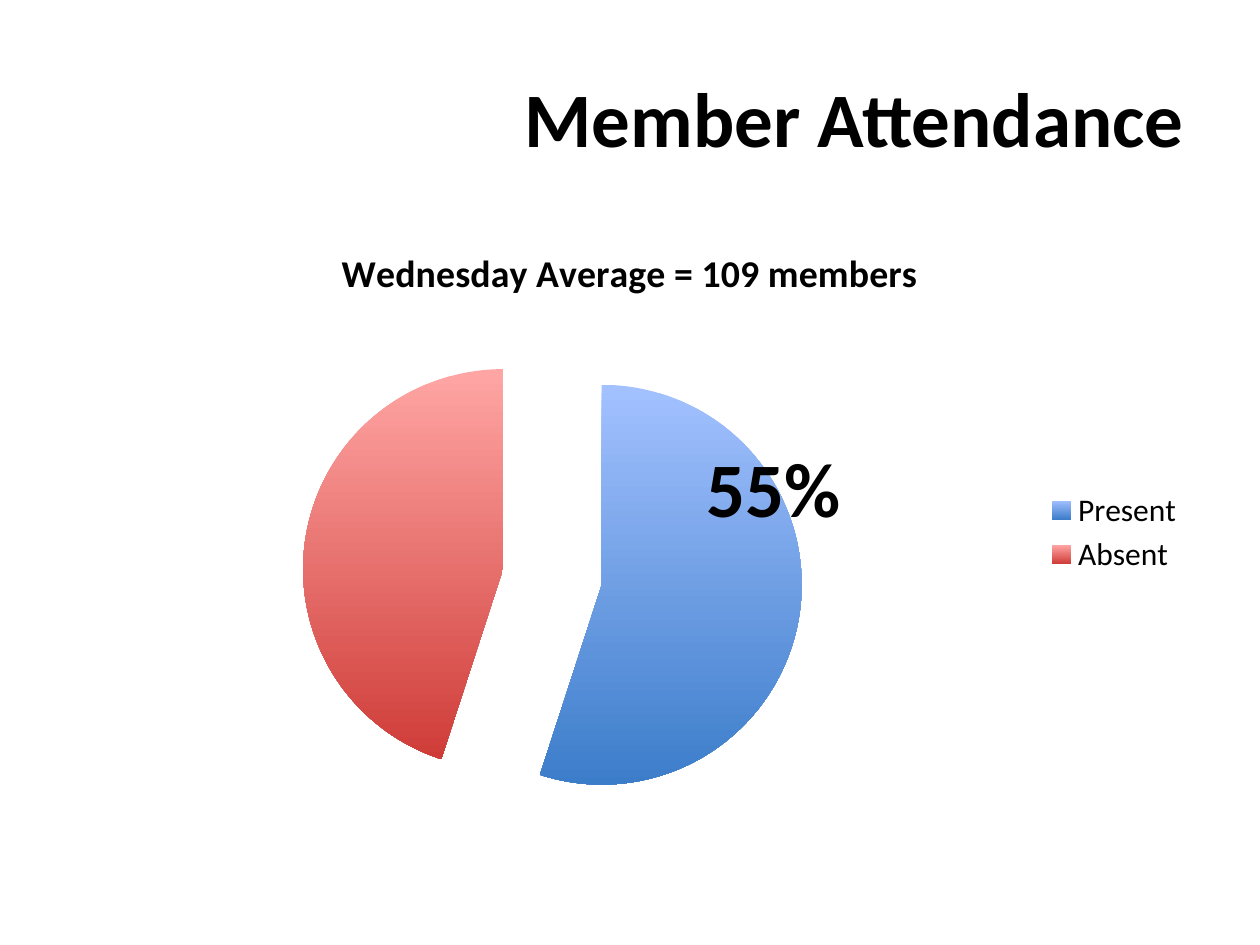
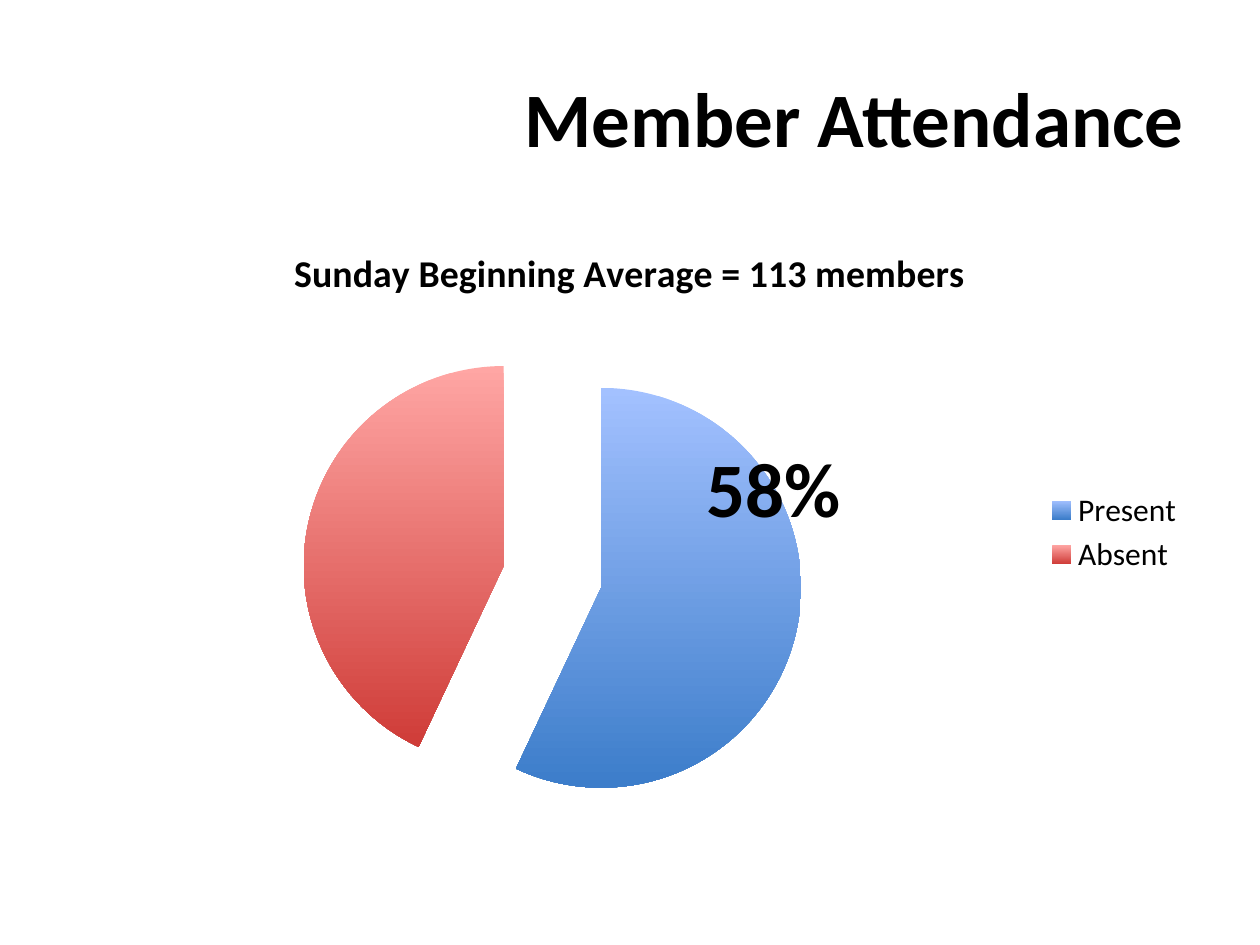
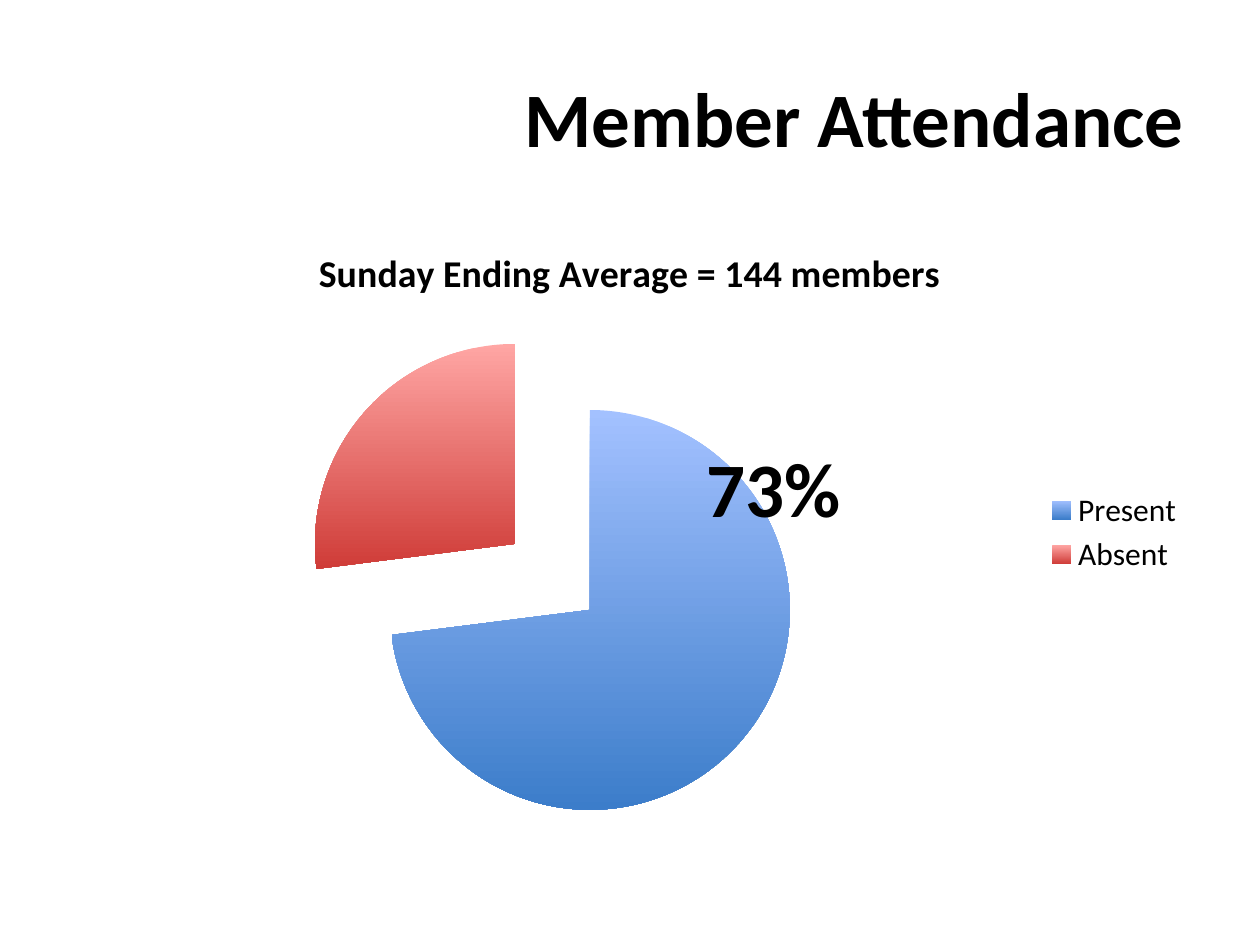
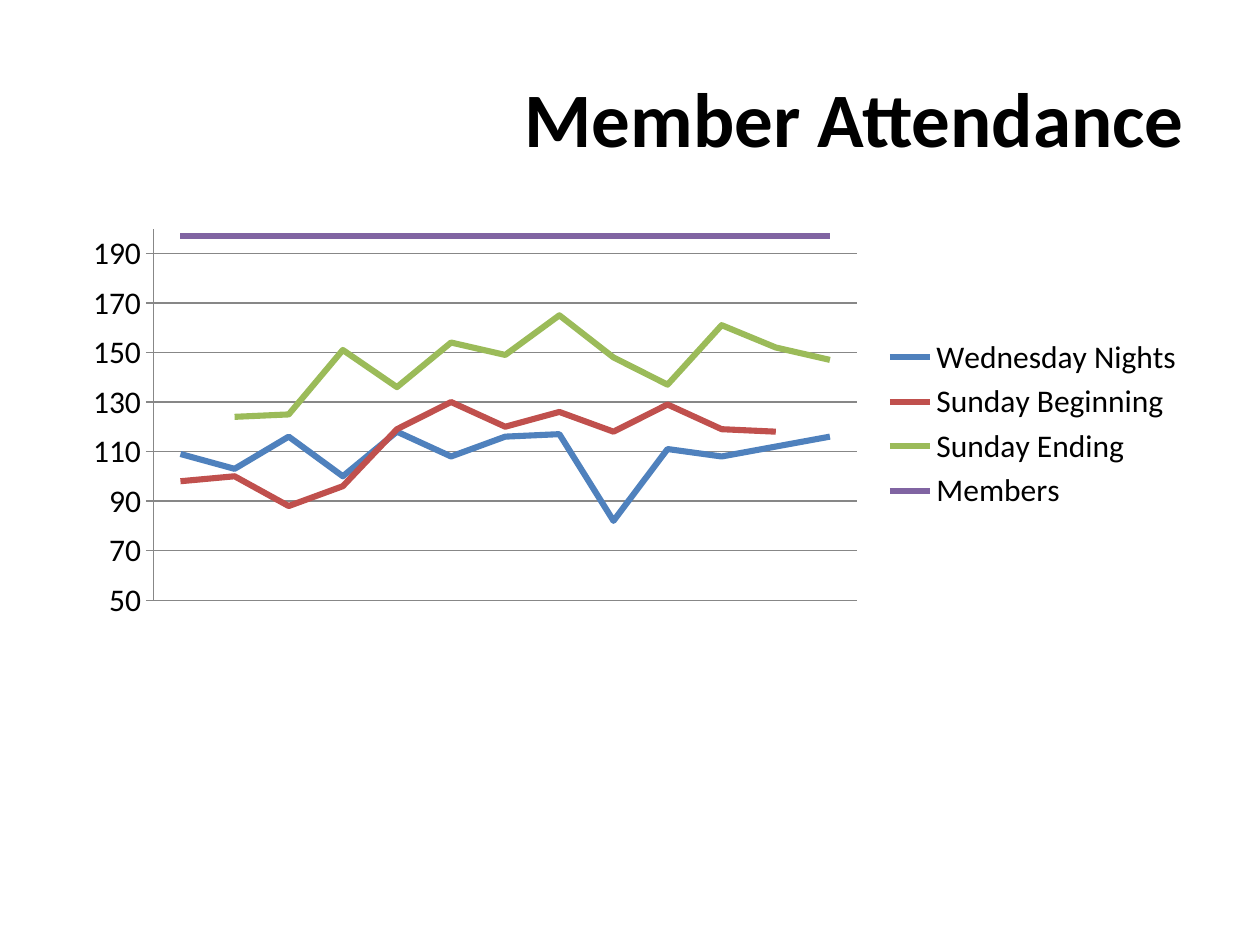
from pptx import Presentation
from pptx.chart.data import CategoryChartData
from pptx.dml.color import RGBColor
from pptx.enum.chart import XL_CHART_TYPE, XL_LEGEND_POSITION, XL_TICK_LABEL_POSITION, XL_TICK_MARK
from pptx.enum.text import MSO_ANCHOR, MSO_AUTO_SIZE, PP_ALIGN
from pptx.oxml.xmlchemy import OxmlElement
from pptx.util import Emu, Pt

PIE, LINE = XL_CHART_TYPE.PIE, XL_CHART_TYPE.LINE
LEGEND_RIGHT = XL_LEGEND_POSITION.RIGHT
TICK_OUTSIDE, TICK_NONE = XL_TICK_MARK.OUTSIDE, XL_TICK_MARK.NONE
LABELS_LOW = XL_TICK_LABEL_POSITION.LOW
LEFT, RIGHT = PP_ALIGN.LEFT, PP_ALIGN.RIGHT
MIDDLE, TOP = MSO_ANCHOR.MIDDLE, MSO_ANCHOR.TOP
GROW = MSO_AUTO_SIZE.SHAPE_TO_FIT_TEXT

EMU_PER_PX = 9144
TITLE_ONLY = 5
FONT = "Calibri"
HEADING = "Member Attendance"

BLACK = RGBColor(0x00, 0x00, 0x00)
GRID_GRAY = RGBColor(0x87, 0x87, 0x87)
BLUE = RGBColor(0x4F, 0x81, 0xBD)
RED = RGBColor(0xC0, 0x50, 0x4D)
GREEN = RGBColor(0x9B, 0xBB, 0x59)
PURPLE = RGBColor(0x80, 0x64, 0xA2)
SLICE_GRADIENTS = (
    (RGBColor(0xA3, 0xC1, 0xFF), RGBColor(0x3C, 0x7D, 0xCA)),
    (RGBColor(0xFF, 0xA6, 0xA4), RGBColor(0xCF, 0x3C, 0x38)),
)

AVERAGES = (
    ("Wednesday Average = 109 members", (55, 45), "55%"),
    ("Sunday Beginning Average = 113 members", (57, 43), "58%"),
    ("Sunday Ending Average = 144 members", (73, 27), "73%"),
)
MEETINGS = (
    ("Wednesday Nights", BLUE,
     (109, 103, 116, 100, 118, 108, 116, 117, 82, 111, 108, 112, 116)),
    ("Sunday Beginning", RED,
     (98, 100, 88, 96, 119, 130, 120, 126, 118, 129, 119, 118, None)),
    ("Sunday Ending", GREEN,
     (None, 124, 125, 151, 136, 154, 149, 165, 148, 137, 161, 152, 147)),
    ("Members", PURPLE, (197,) * 13),
)


def px(*lengths):
    """Turn lengths in px into EMU."""
    return [Emu(length * EMU_PER_PX) for length in lengths]


def style_font(font, size, bold=False):
    """Apply the shared typeface and colour to a font."""
    font.name = FONT
    font.size = Pt(size)
    font.bold = bold
    font.color.rgb = BLACK


def write_text(frame, text, size=44, bold=True, align=LEFT, anchor=TOP):
    """Write one formatted paragraph into a text frame."""
    frame.word_wrap = True
    frame.vertical_anchor = anchor
    paragraph = frame.paragraphs[0]
    paragraph.alignment = align
    run = paragraph.add_run()
    run.text = text
    style_font(run.font, size, bold)


def add_titled_slide(prs):
    """Add a slide with the shared heading."""
    slide = prs.slides.add_slide(prs.slide_layouts[TITLE_ONLY])
    heading = slide.shapes.title
    heading.left, heading.top, heading.width, heading.height = px(50, 30, 900, 125)
    write_text(heading.text_frame, HEADING, align=RIGHT, anchor=MIDDLE)
    return slide


def add_attendance_chart(slide, kind, categories, series, box):
    """Add a chart with the shared font and right-hand legend."""
    attendance = CategoryChartData()
    attendance.categories = categories
    for name, values in series:
        attendance.add_series(name, values)
    chart = slide.shapes.add_chart(kind, *px(*box), attendance).chart
    style_font(chart.font, 18)
    chart.has_title = False
    chart.has_legend = True
    chart.legend.position = LEGEND_RIGHT
    chart.legend.include_in_layout = False
    return chart


def explode_slices(series, percent):
    """Move the slices of a pie apart."""
    explosion = OxmlElement("c:explosion")
    explosion.set("val", str(percent))
    series._element.find("{*}tx").addnext(explosion)


def add_average_pie(slide, caption, shares):
    """Add a pie of present and absent members."""
    chart = add_attendance_chart(slide, PIE, ("Present", "Absent"),
                                 [("Series 1", shares)], (50, 175, 900, 495))
    chart.has_title = True
    write_text(chart.chart_title.text_frame, caption, size=21.6)
    chart.chart_title.include_in_layout = False
    presence = chart.plots[0].series[0]
    explode_slices(presence, 25)
    for index, shades in enumerate(SLICE_GRADIENTS):
        fill = presence.points[index].format.fill
        fill.gradient()
        fill.gradient_angle = 270
        for stop, shade in zip(fill.gradient_stops, shades):
            stop.color.rgb = shade


def add_percentage(slide, percentage):
    """Add the large share of present members over the pie."""
    label = slide.shapes.add_textbox(*px(551, 345, 144, 84))
    write_text(label.text_frame, percentage)
    label.text_frame.auto_size = GROW


def add_trend_chart(slide):
    """Add the line chart of attendance by meeting."""
    chart = add_attendance_chart(
        slide, LINE, ("1", "2", "3", "4"),
        [(name, values) for name, _, values in MEETINGS], (56, 175, 894, 323))
    for meeting, (_, color, _) in zip(chart.plots[0].series, MEETINGS):
        meeting.smooth = False
        meeting.format.line.color.rgb = color
        meeting.format.line.width = Pt(3.5)
    chart.category_axis.visible = False
    members = chart.value_axis
    members.minimum_scale, members.maximum_scale = 50, 200
    members.major_unit = 20
    members.major_tick_mark, members.minor_tick_mark = TICK_OUTSIDE, TICK_NONE
    members.tick_label_position = LABELS_LOW
    members.has_major_gridlines = True
    for line in (members.format.line, members.major_gridlines.format.line):
        line.color.rgb = GRID_GRAY
        line.width = Pt(0.75)


def main():
    """Build the attendance slides."""
    prs = Presentation()
    prs.slide_width, prs.slide_height = px(1000, 750)
    for caption, shares, percentage in AVERAGES:
        slide = add_titled_slide(prs)
        add_average_pie(slide, caption, shares)
        add_percentage(slide, percentage)
    add_trend_chart(add_titled_slide(prs))
    prs.save("out.pptx")


if __name__ == "__main__":
    main()
